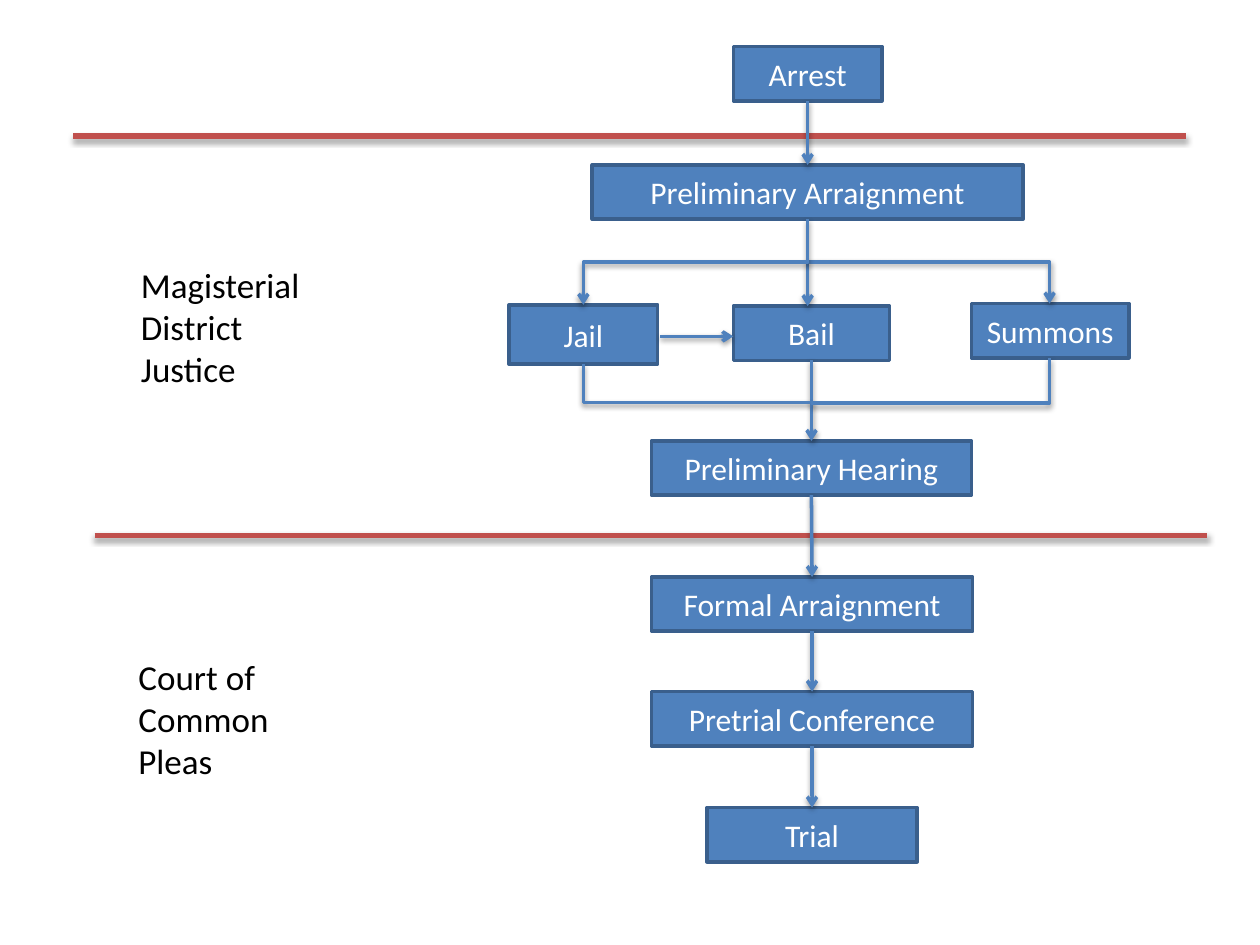
from lxml.etree import SubElement
from pptx import Presentation
from pptx.dml.color import RGBColor as RGB
from pptx.enum.shapes import MSO_CONNECTOR as Link, MSO_SHAPE as Shape
from pptx.enum.text import MSO_ANCHOR as Anchor, MSO_AUTO_SIZE as Fit, PP_ALIGN as Align
from pptx.oxml.ns import qn
from pptx.util import Inches, Pt


class Theme:
    font = "Calibri"
    fill = RGB(0x4F, 0x81, 0xBD)
    edge = RGB(0x3A, 0x5F, 0x8C)
    rule = RGB(0xC0, 0x50, 0x4D)
    light = RGB(0xFF, 0xFF, 0xFF)
    dark = RGB(0, 0, 0)
    step = Pt(18)
    court = Pt(20)


def write(para, text, size, color):
    run = para.add_run()
    run.text = text
    run.font.name, run.font.size = Theme.font, size
    run.font.color.rgb = color


def draw(kind, start, end, arrow=True, color=Theme.fill, width=2, dist=1.6, alpha=38):
    """Add a connector with a soft shadow below it."""
    link = slide.shapes.add_connector(kind, *map(Inches, start + end))
    link.line.color.rgb, link.line.width = color, Pt(width)
    if arrow:
        SubElement(link.line._get_or_add_ln(), qn("a:tailEnd"), type="arrow")
    effects = SubElement(link._element.spPr, qn("a:effectLst"))
    shadow = SubElement(effects, qn("a:outerShdw"), blurRad=str(Pt(3.1)),
                        dist=str(Pt(dist)), dir="5400000", rotWithShape="0")
    shade = SubElement(shadow, qn("a:srgbClr"), val=str(Theme.dark))
    SubElement(shade, qn("a:alpha"), val=str(alpha * 1000))
    return link


deck = Presentation()
deck.slide_width, deck.slide_height = Inches(10), Inches(7.5)
slide = deck.slides.add_slide(deck.slide_layouts[6])

# Steps of the case
steps = [
    ("Arrest", 5.82, 0.37, 1.18, 0.43),
    ("Preliminary Arraignment", 4.7, 1.31, 3.42, 0.43),
    ("Jail", 4.04, 2.42, 1.18, 0.47),
    ("Bail", 5.82, 2.43, 1.24, 0.43),
    ("Summons", 7.71, 2.41, 1.25, 0.43),
    ("Preliminary Hearing", 5.17, 3.5, 2.54, 0.43),
    ("Formal Arraignment", 5.17, 4.58, 2.55, 0.43),
    ("Pretrial Conference", 5.17, 5.49, 2.55, 0.43),
    ("Trial", 5.61, 6.41, 1.67, 0.43),
]
boxes = {}
for name, *place in steps:
    box = slide.shapes.add_shape(Shape.FLOWCHART_PROCESS, *map(Inches, place))
    box.shadow.inherit = False
    box.fill.solid()
    box.fill.fore_color.rgb = Theme.fill
    box.line.color.rgb, box.line.width = Theme.edge, Pt(2)
    box.text_frame.vertical_anchor = Anchor.MIDDLE
    para = box.text_frame.paragraphs[0]
    para.alignment = Align.CENTER
    write(para, name, Theme.step, Theme.light)
    boxes[name] = box

# Borders between the courts
for left, top in [(0.58, 1.08), (0.75, 4.25)]:
    draw(Link.STRAIGHT, (left, top), (left + 8.83, top), False, Theme.rule, 3, 1.8, 35)

# Names of the courts
courts = [
    (1.02, 2.04, ["Magisterial", "District", "Justice"]),
    (1, 5.15, ["Court of", "Common", "Pleas"]),
]
for left, top, lines in courts:
    label = slide.shapes.add_textbox(*map(Inches, (left, top, 2.03, 1.11)))
    frame = label.text_frame
    frame.word_wrap = True
    frame.auto_size = Fit.SHAPE_TO_FIT_TEXT
    for i, line in enumerate(lines):
        para = frame.add_paragraph() if i else frame.paragraphs[0]
        write(para, line, Theme.court, Theme.dark)

# Straight arrows from step to step
pairs = [
    ("Arrest", "Preliminary Arraignment"),
    ("Preliminary Hearing", "Formal Arraignment"),
    ("Formal Arraignment", "Pretrial Conference"),
    ("Pretrial Conference", "Trial"),
]
for first, then in pairs:
    arrow = draw(Link.STRAIGHT, (0, 0), (1, 1))
    arrow.begin_connect(boxes[first], 2)
    arrow.end_connect(boxes[then], 0)

# Branch to jail, bail and summons, and back to the hearing
fork, join = (6.41, 2.08), (6.44, 3.2)
draw(Link.STRAIGHT, fork, (6.41, 2.43))
draw(Link.STRAIGHT, (6.44, 2.86), join, False).begin_connect(boxes["Bail"], 2)
draw(Link.STRAIGHT, (5.24, 2.67), (5.82, 2.67))
draw(Link.ELBOW, fork, (8.33, 2.41))._element.spPr.prstGeom.set("prst", "bentConnector2")

# Elbows that leave downward are turned by a quarter, so width and height swap
turns = [
    ((6.41, 1.74), (4.63, 2.42), True, "bentConnector3"),
    ((4.63, 2.89), (6.44, 3.5), True, "bentConnector3"),
    ((8.33, 2.84), join, False, "bentConnector2"),
]
for start, end, arrow, geom in turns:
    elbow = draw(Link.ELBOW, start, end, arrow)
    across, down = abs(end[0] - start[0]), end[1] - start[1]
    elbow.left = Inches((start[0] + end[0] - down) / 2)
    elbow.top = Inches((start[1] + end[1] - across) / 2)
    elbow.width, elbow.height = Inches(down), Inches(across)
    right = end[0] > start[0]
    props = elbow._element.spPr
    props.prstGeom.set("prst", geom)
    turn = props.find(qn("a:xfrm"))
    turn.set("rot", str((270 if right else 90) * 60000))
    turn.set("flipH", "1" if right else "0")

deck.save("out.pptx")
